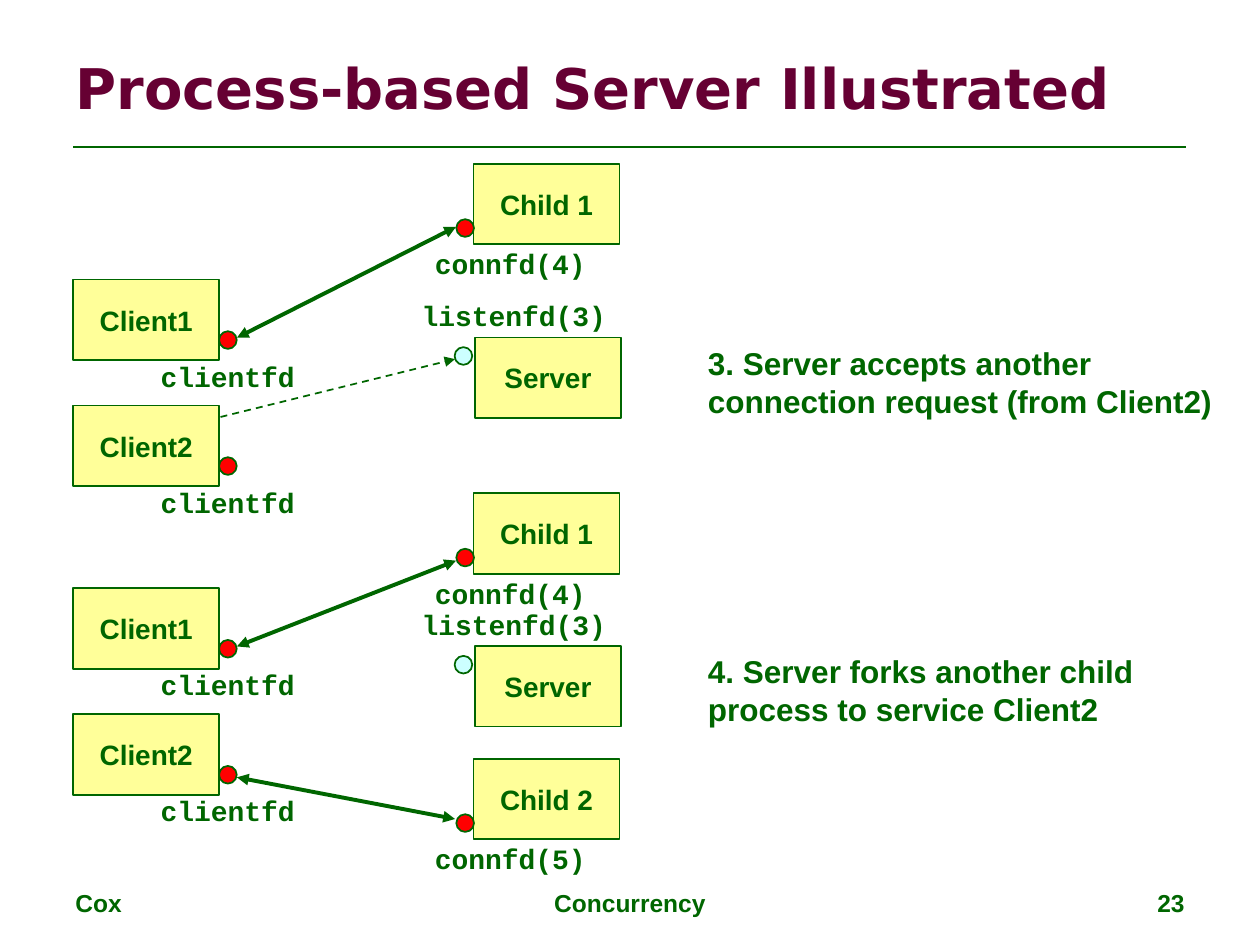
from dataclasses import dataclass

from lxml import etree
from pptx import Presentation
from pptx.dml.color import RGBColor
from pptx.enum.dml import MSO_LINE
from pptx.enum.shapes import MSO_CONNECTOR, MSO_SHAPE
from pptx.enum.text import MSO_ANCHOR, MSO_AUTO_SIZE, PP_ALIGN
from pptx.oxml.ns import qn
from pptx.util import Pt

LEFT, CENTER, RIGHT = PP_ALIGN.LEFT, PP_ALIGN.CENTER, PP_ALIGN.RIGHT
TOP, MIDDLE = MSO_ANCHOR.TOP, MSO_ANCHOR.MIDDLE
FIT_SHAPE, NO_FIT = MSO_AUTO_SIZE.SHAPE_TO_FIT_TEXT, MSO_AUTO_SIZE.NONE
RECTANGLE, OVAL = MSO_SHAPE.RECTANGLE, MSO_SHAPE.OVAL
STRAIGHT, DASH = MSO_CONNECTOR.STRAIGHT, MSO_LINE.DASH


@dataclass(frozen=True)
class Theme:
    green: RGBColor = RGBColor(0x00, 0x66, 0x00)
    maroon: RGBColor = RGBColor(0x66, 0x00, 0x33)
    yellow: RGBColor = RGBColor(0xFF, 0xFF, 0x99)
    red: RGBColor = RGBColor(0xFF, 0x00, 0x00)
    pale_blue: RGBColor = RGBColor(0xCC, 0xFF, 0xFF)
    title_font: str = "DejaVu Sans"
    body_font: str = "Arial"
    code_font: str = "Courier New"
    title_size: int = 32
    note_size: int = 18
    box_size: int = 16
    footer_size: int = 14


class SlideBuilder:
    box_width, box_height, dot_size = 83.5, 46, 10.1

    def __init__(self, page, theme):
        self.page = page
        self.theme = theme

    def add_text(self, shape, text, size, font=None, color=None, align=LEFT,
                 anchor=MIDDLE, wrap=True, fit=NO_FIT):
        frame = shape.text_frame
        frame.word_wrap = wrap
        frame.auto_size = fit
        frame.vertical_anchor = anchor
        para = frame.paragraphs[0]
        para.alignment = align
        span = para.add_run()
        span.text = text
        span.font.name = font or self.theme.body_font
        span.font.size = Pt(size)
        span.font.bold = True
        span.font.color.rgb = color or self.theme.green

    def title(self, text, left, top, width, height):
        title = self.page.shapes.title
        title.left, title.top = Pt(left), Pt(top)
        title.width, title.height = Pt(width), Pt(height)
        self.add_text(title, text, self.theme.title_size,
                      self.theme.title_font, self.theme.maroon)

    def footer(self, text, left, width, align):
        box = self.page.shapes.add_textbox(Pt(left), Pt(504), Pt(width), Pt(25))
        self.add_text(box, text, self.theme.footer_size, align=align, anchor=TOP)

    def note(self, text, top):
        box = self.page.shapes.add_textbox(Pt(397.5), Pt(top), Pt(304.5), Pt(50.5))
        self.add_text(box, text, self.theme.note_size, fit=FIT_SHAPE)

    def shape(self, parent, kind, left, top, width, height, fill):
        shape = parent.add_shape(kind, Pt(left), Pt(top), Pt(width), Pt(height))
        shape.shadow.inherit = False
        shape.fill.solid()
        shape.fill.fore_color.rgb = fill
        shape.line.color.rgb = self.theme.green
        shape.line.width = Pt(1)
        return shape

    def box(self, parent, text, left, top):
        box = self.shape(parent, RECTANGLE, left, top,
                         self.box_width, self.box_height, self.theme.yellow)
        self.add_text(box, text, self.theme.box_size, align=CENTER, wrap=False)

    def dot(self, parent, left, top, fill):
        self.shape(parent, OVAL, left, top, self.dot_size, self.dot_size, fill)

    def label(self, parent, text, left, top, width):
        box = parent.add_textbox(Pt(left), Pt(top), Pt(width), Pt(26.6))
        self.add_text(box, text, self.theme.box_size, self.theme.code_font,
                      align=CENTER, wrap=False, fit=FIT_SHAPE)

    def line(self, start, end, width, ends=(), dash=None):
        line = self.page.shapes.add_connector(
            STRAIGHT, *(Pt(value) for value in (*start, *end)))
        line.line.color.rgb = self.theme.green
        line.line.width = Pt(width)
        if dash:
            line.line.dash_style = dash
        properties = line._element.spPr
        outline = properties.find(qn("a:ln"))
        for end_name in ends:
            etree.SubElement(outline, qn(f"a:{end_name}"), type="triangle")
        etree.SubElement(properties, qn("a:effectLst"))

    def connection(self, start, end):
        self.line(start, end, 2.25, ends=("headEnd", "tailEnd"))

    def client(self, name, top):
        group = self.page.shapes.add_group_shape().shapes
        self.dot(group, 125.2, top + 29.5, self.theme.red)
        self.box(group, name, 41.8, top)
        self.label(group, "clientfd", 84.4, top + 41.8, 91.4)

    def child(self, name, descriptor, top):
        group = self.page.shapes.add_group_shape().shapes
        self.box(group, name, 270.6, top)
        self.dot(group, 260.8, top + 31.7, self.theme.red)
        self.label(group, f"connfd({descriptor})", 241.2, top + 43.6, 100.8)

    def server(self, top):
        shapes = self.page.shapes
        self.dot(shapes, 259.8, top + 5.6, self.theme.pale_blue)
        self.label(shapes, "listenfd(3)", 233.5, top - 25.8, 120.2)
        self.box(shapes, "Server", 271.4, top)

    def stage(self, top, note):
        self.client("Client1", top)
        self.client("Client2", top + 72)
        self.server(top + 33)
        self.note(note, top + 33)


def main():
    deck = Presentation()
    deck.slide_width, deck.slide_height = Pt(720), Pt(540)
    page = deck.slides.add_slide(deck.slide_layouts[5])
    builder = SlideBuilder(page, Theme())

    builder.title("Process-based Server Illustrated", 36, 21.6, 648, 56.2)
    builder.line((42, 84), (678, 84), 1.5)
    builder.footer("Cox", 36, 168, LEFT)
    builder.footer("Concurrency", 246, 228, CENTER)
    builder.footer("23", 516, 168, RIGHT)

    builder.stage(159.8, "3. Server accepts another connection request (from Client2)")
    builder.child("Child 1", 4, 93.6)
    builder.connection((135.4, 193), (260.6, 129.6))
    builder.line((126, 238.3), (260, 205.2), 1, ends=("tailEnd",), dash=DASH)

    builder.stage(336.2, "4. Server forks another child process to service Client2")
    builder.child("Child 1", 4, 281.9)
    builder.child("Child 2", 5, 433.6)
    builder.connection((135.4, 369.4), (260.6, 320.4))
    builder.connection((135.4, 444.2), (260, 468))

    deck.save("out.pptx")


if __name__ == "__main__":
    main()
